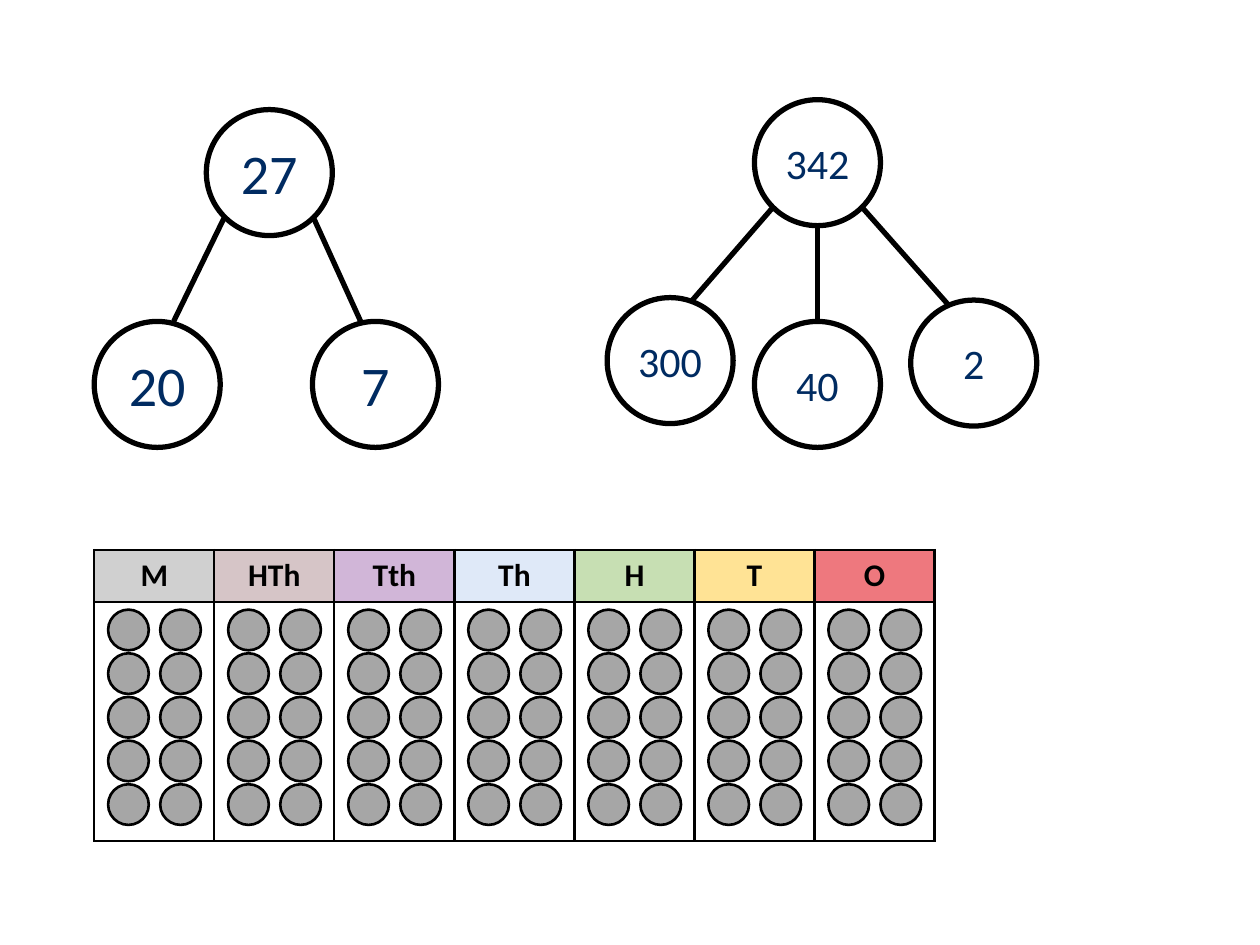
from itertools import product

from lxml.etree import SubElement
from pptx import Presentation
from pptx.dml.color import RGBColor
from pptx.enum.shapes import MSO_CONNECTOR, MSO_SHAPE
from pptx.enum.text import MSO_ANCHOR, PP_ALIGN
from pptx.oxml.ns import qn
from pptx.util import Cm, Pt

HUES = {
    "ink": "000000", "text": "002B61", "paper": "FFFFFF", "disc": "A6A6A6",
    "M": "D0D0D0", "HTh": "D6C5C7", "Tth": "D1B6D8", "Th": "DFE9F8",
    "H": "C7DFB3", "T": "FFE395", "O": "EE787E",
}
PLACES = ["M", "HTh", "Tth", "Th", "H", "T", "O"]
NODE = 2.54


def tint(name):
    """Return the named colour."""
    return RGBColor.from_string(HUES[name])


def style(item, values):
    """Set each given attribute on the item."""
    for name, value in values.items():
        setattr(item, name, value)


def ink(line, width):
    """Make a line solid black with the given width."""
    line.color.rgb = tint("ink")
    line.width = Pt(width)


def write(frame, text, hue, size, bold=False):
    """Write one centred line of text."""
    par = frame.paragraphs[0]
    par.text = text
    par.alignment = PP_ALIGN.CENTER
    style(par.font, {"name": "Calibri", "size": Pt(size), "bold": bold})
    par.font.color.rgb = tint(hue)


def ring(slide, left, top, size, hue, width):
    """Draw a filled circle with a black outline."""
    shape = slide.shapes.add_shape(
        MSO_SHAPE.OVAL, Cm(left), Cm(top), Cm(size), Cm(size))
    shape.shadow.inherit = False
    shape.fill.solid()
    shape.fill.fore_color.rgb = tint(hue)
    ink(shape.line, width)
    return shape


def tree(slide, left, top, size, nodes, links):
    """Draw a part-whole model from its top left corner."""
    for text, x, y in nodes:
        frame = ring(slide, left + x, top + y, NODE, "paper", 3).text_frame
        style(frame, {
            "vertical_anchor": MSO_ANCHOR.MIDDLE, "word_wrap": False,
            "margin_left": 0, "margin_right": 0})
        write(frame, text, "text", size)
    for x1, y1, x2, y2 in links:
        link = slide.shapes.add_connector(
            MSO_CONNECTOR.STRAIGHT, Cm(left + x1), Cm(top + y1),
            Cm(left + x2), Cm(top + y2))
        ink(link.line, 3)
        SubElement(link._element.spPr, qn("a:effectLst"))


def edge(cell, width):
    """Give a cell a black border on every side."""
    props = cell._tc.get_or_add_tcPr()
    for side in ("lnL", "lnR", "lnT", "lnB"):
        line = SubElement(props, qn(f"a:{side}"), w=str(Pt(width)))
        fill = SubElement(line, qn("a:solidFill"))
        SubElement(fill, qn("a:srgbClr"), val=HUES["ink"])


def chart(slide, left, top, width, heights):
    """Draw the place value chart with ten counters in each column."""
    table = slide.shapes.add_table(
        2, len(PLACES), Cm(left), Cm(top),
        Cm(width * len(PLACES)), Cm(sum(heights))).table
    style(table, {"first_row": False, "horz_banding": False})
    for row, high in zip(table.rows, heights):
        row.height = Cm(high)
    for col, place in enumerate(PLACES):
        table.columns[col].width = Cm(width)
        for row, hue in enumerate((place, "paper")):
            cell = table.cell(row, col)
            edge(cell, 1.5)
            cell.fill.solid()
            cell.fill.fore_color.rgb = tint(hue)
        head = table.cell(0, col)
        head.vertical_anchor = MSO_ANCHOR.MIDDLE
        write(head.text_frame, place, "ink", 18, True)
    for col, side, row in product(range(len(PLACES)), range(2), range(5)):
        x = left + col * width + 0.28 + side * 1.05
        y = top + heights[0] + 0.16 + row * 0.88
        ring(slide, x, y, 0.82, "disc", 1.5)


def main():
    """Build and save the slide."""
    deck = Presentation()
    style(deck, {"slide_width": Cm(25.4), "slide_height": Cm(19.05)})
    slide = deck.slides.add_slide(deck.slide_layouts[6])
    tree(slide, 1.9, 2.21, 32,
         [("27", 2.26, 0), ("20", 0, 4.27), ("7", 4.4, 4.27)],
         [(2.62, 2.18, 1.6, 4.27), (4.42, 2.18, 5.38, 4.29)])
    tree(slide, 12.24, 2.01, 24,
         [("342", 2.97, 0), ("300", 0, 3.99),
          ("2", 6.12, 4.04), ("40", 2.97, 4.47)],
         [(3.35, 2.16, 1.7, 4.06), (5.13, 2.16, 6.91, 4.17),
          (4.24, 2.54, 4.24, 4.47)])
    chart(slide, 1.9, 11.09, 2.42, (1.04, 4.83))
    deck.save("out.pptx")


if __name__ == "__main__":
    main()
